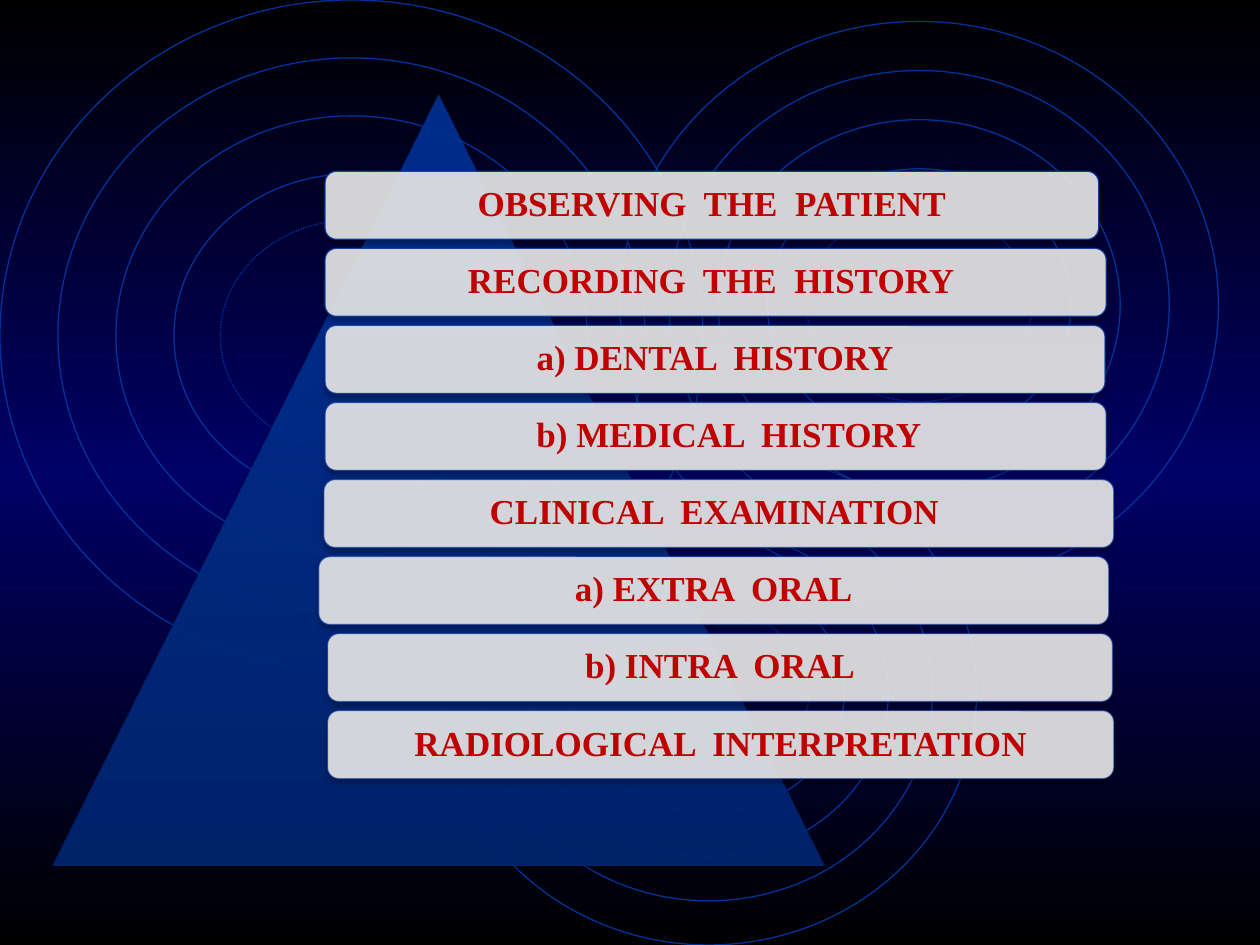
import pptx
import pptx.util
import pptx.dml.color
import pptx.enum.dml
import pptx.enum.shapes
import pptx.enum.text
import pptx.oxml
import pptx.oxml.ns

Inches, Pt = pptx.util.Inches, pptx.util.Pt
SHAPES = pptx.enum.shapes.MSO_SHAPE
NS = pptx.oxml.ns.nsdecls("a")

COLORS = {
    "black": "000000", "navy": "000066", "blue": "003399", "bar": "EAEAEA",
    "text": "C00000", "peak_low": "002672", "peak_mid": "003194", "peak_top": "003295",
}
FONT = {"name": "Times New Roman", "size": Pt(20), "bold": True}
FRAME = {
    "word_wrap": True, "vertical_anchor": pptx.enum.text.MSO_ANCHOR.MIDDLE,
    "margin_top": Inches(0.08), "margin_bottom": Inches(0.08),
}
PARAGRAPH = {"alignment": pptx.enum.text.PP_ALIGN.CENTER, "line_spacing": 0.9}


def apply(target, values):
    for name, value in values.items():
        setattr(target, name, value)


class SlideBuilder:
    """Holds the style and the current slide."""

    def __init__(self, page):
        self.page = page

    def color_xml(self, name, alpha=100):
        return (f'<a:srgbClr {NS} val="{COLORS[name]}">'
                f'<a:alpha val="{round(alpha * 1000)}"/></a:srgbClr>')

    def solid(self, fill, name, alpha=100):
        fill.solid()
        fill.fore_color.rgb = pptx.dml.color.RGBColor.from_string(COLORS[name])
        if alpha < 100:
            color = fill._xPr.find(".//" + pptx.oxml.ns.qn("a:srgbClr"))
            color.append(pptx.oxml.parse_xml(f'<a:alpha {NS} val="{round(alpha * 1000)}"/>'))

    def gradient(self, fill, stops, angle, alpha=100):
        fill.gradient()
        fill.gradient_angle = angle
        stop_list = fill._xPr.find(".//" + pptx.oxml.ns.qn("a:gsLst"))
        for stop in list(stop_list):
            stop_list.remove(stop)
        for position, name in stops:
            stop_list.append(pptx.oxml.parse_xml(
                f'<a:gs {NS} pos="{position * 1000}">{self.color_xml(name, alpha)}</a:gs>'))

    def shape(self, kind, left, top, width, height):
        shape = self.page.shapes.add_shape(
            kind, Inches(left), Inches(top), Inches(width), Inches(height))
        shape.shadow.inherit = False
        return shape

    def outline(self, shape, alpha=100):
        shape.line.width = Pt(0.75)
        self.solid(shape.line.fill, "blue", alpha)

    def drop_shadow(self, shape):
        effects = shape._element.spPr.find(pptx.oxml.ns.qn("a:effectLst"))
        effects.append(pptx.oxml.parse_xml(
            f'<a:outerShdw {NS} blurRad="{Pt(3.1)}" dist="{Pt(1.8)}" dir="5400000" '
            f'rotWithShape="0">{self.color_xml("black", 35)}</a:outerShdw>'))

    def ripple(self, left, top, width, height, step):
        """Concentric rings, each one step further in; the innermost is dotted."""
        for count in (0, 1, 2, 3, 3.8):
            inset = count * step
            ring = self.shape(SHAPES.OVAL, left + inset, top + inset,
                              width - 2 * inset, height - 2 * inset)
            ring.fill.background()
            self.outline(ring)
            if count == 3.8:
                ring.line.dash_style = pptx.enum.dml.MSO_LINE.ROUND_DOT

    def pyramid(self, left, top, size):
        peak = self.shape(SHAPES.ISOSCELES_TRIANGLE, left, top, size, size)
        stops = [(0, "peak_low"), (80, "peak_mid"), (100, "peak_top")]
        self.gradient(peak.fill, stops, 90, alpha=90)
        peak.line.fill.background()
        self.drop_shadow(peak)

    def bar(self, text, left, top, width, line_alpha, indent=0, outdent=0):
        box = self.shape(SHAPES.ROUNDED_RECTANGLE, left, top, width, 0.54)
        self.solid(box.fill, "bar", 90)
        self.outline(box, line_alpha)
        self.drop_shadow(box)
        frame = box.text_frame
        apply(frame, FRAME)
        frame.margin_left = Inches(0.08 + indent)
        frame.margin_right = Inches(0.08 + outdent)
        para = frame.paragraphs[0]
        apply(para, PARAGRAPH)
        span = para.add_run()
        span.text = text
        apply(span.font, FONT)
        self.solid(span.font.fill, "text")


def main():
    deck = pptx.Presentation()
    deck.slide_width, deck.slide_height = Inches(10), Inches(7.5)
    page = deck.slides.add_slide(deck.slide_layouts[6])
    builder = SlideBuilder(page)

    # Background
    builder.gradient(page.background.fill, [(0, "black"), (50, "navy"), (100, "black")], 270)
    builder.ripple(0, 0, 5.58, 5.33, 0.46)
    builder.ripple(3.5, 3.5, 4.25, 4, 0.35)
    builder.ripple(4.92, 0.17, 4.75, 4.5, 0.39)

    # Pyramid with the steps of the examination: text, left, width, left and right indent
    builder.pyramid(0.42, 0.75, 6.12)
    steps = [
        ("OBSERVING  THE  PATIENT", 2.58, 6.14, 0, 0),
        ("RECORDING  THE  HISTORY", 2.58, 6.2, 0, 0.07),
        ("a) DENTAL  HISTORY", 2.58, 6.19, 0, 0),
        ("b) MEDICAL  HISTORY", 2.58, 6.2, 0.21, 0),
        ("CLINICAL  EXAMINATION", 2.57, 6.27, 0, 0.07),
        ("a) EXTRA  ORAL", 2.53, 6.27, 0, 0),
        ("b) INTRA  ORAL", 2.6, 6.23, 0, 0),
        ("RADIOLOGICAL  INTERPRETATION", 2.6, 6.24, 0, 0),
    ]
    pitch = (5.64 - 1.36) / (len(steps) - 1)
    fade = 40 / (len(steps) - 1)
    for row, (text, left, width, indent, outdent) in enumerate(steps):
        builder.bar(text, left, 1.36 + row * pitch, width, 90 - row * fade, indent, outdent)

    deck.save("out.pptx")


if __name__ == "__main__":
    main()
